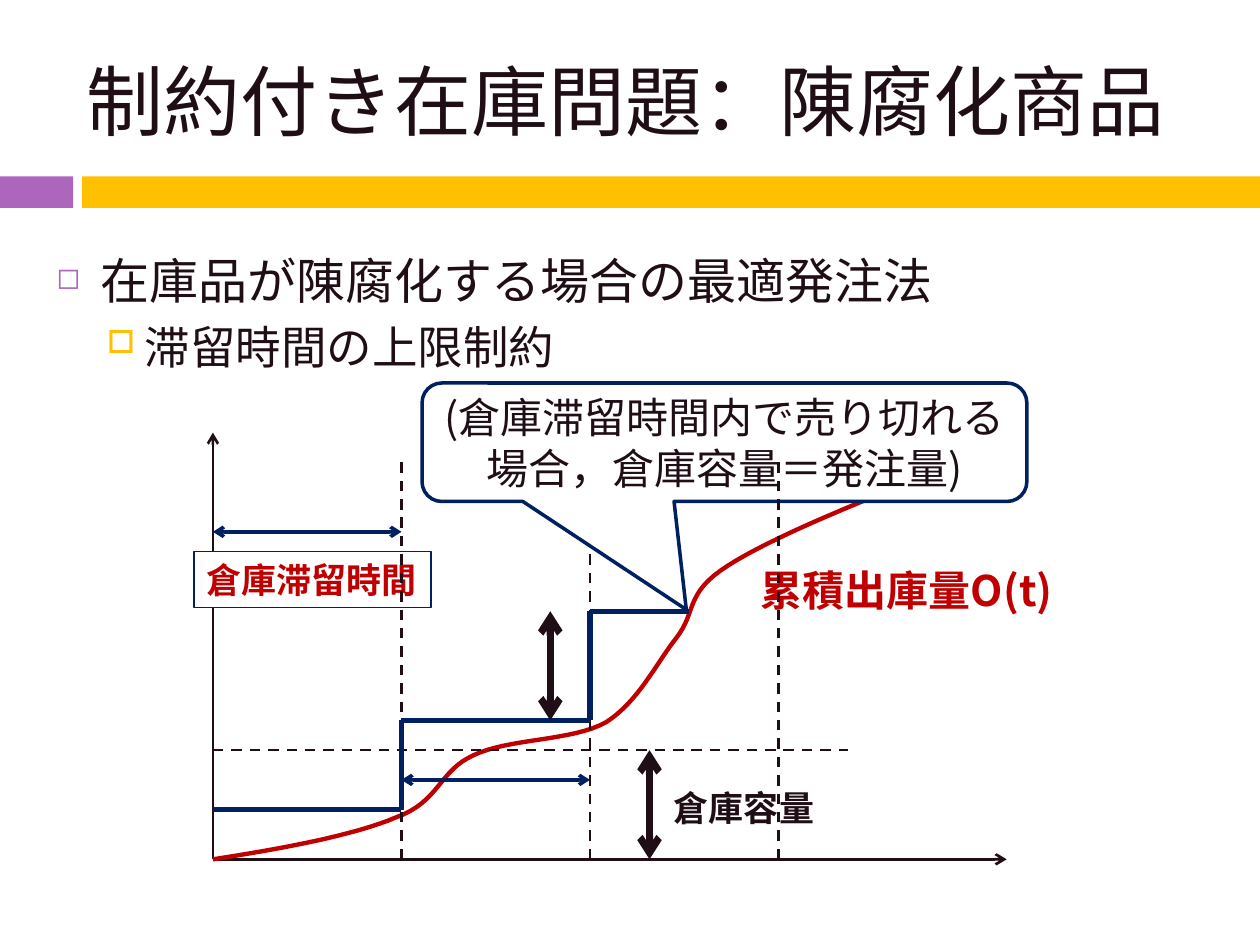
"""Build a slide on the constrained inventory problem for perishable goods."""
from lxml import etree
from pptx import Presentation
from pptx import util as u
from pptx.dml.color import RGBColor
from pptx.enum import dml, shapes, text
from pptx.oxml import ns

COLORS = {"ink": "200E17", "navy": "002060", "red": "C00000", "white": "FFFFFF",
          "purple": "AC66BB", "gold": "FFC000"}
FONT = "Noto Sans CJK JP"
WIDTH, HEIGHT = 10, 7.5
ORIGIN_X, ORIGIN_Y = 1.69, 6.82
CELL = 6.3 / 80
PERIODS = [19 * number for number in range(4)]
FIRST, CAPACITY, SECOND, THIRD = 5, 11, 14, 25
GUIDE_TOP = 40

BANDS = [(0, 0.58, "purple"), (0.65, 9.35, "gold")]
TITLE = "制約付き在庫問題：陳腐化商品"
BULLETS = [
    dict(words="在庫品が陳腐化する場合の最適発注法", size=28, before=7, left=0.35,
         hang=0.35, mark="◻", color="purple", percent=60),
    dict(words="滞留時間の上限制約", size=26, before=5.5, left=0.7,
         hang=0.3, mark="□", color="gold", percent=70),
]
LINE_STYLES = {
    "axis": dict(color="ink", width=1.5, ends=["tailEnd"]),
    "guide": dict(color="ink", width=1.5, dash=True),
    "step": dict(color="navy", width=3),
    "time": dict(color="navy", width=2, ends=["headEnd", "tailEnd"]),
    "amount": dict(color="ink", width=4, ends=["headEnd", "tailEnd"]),
}
OUTFLOW = [
    (0, 0), (7.1, 1.1), (14.1, 2.4), (18.4, 4.2), (22.9, 5.8), (22.7, 8.9),
    (26.3, 10.5), (29.8, 12.2), (36.2, 11.9), (39.6, 13.8), (42.9, 15.9),
    (44.7, 19.8), (46.7, 22.3), (48.8, 25), (47.5, 26.8), (51.9, 29.6),
    (56.3, 32.4), (64.6, 35.8), (73, 39.1),
]
LABELS = {
    "outflow": dict(words="累積出庫量O(t)", box=(5.94, 4.43, 2.68, 0.5), size=24,
                    color="red", bold=True, wrap=True),
    "stay": dict(words="倉庫滞留時間", box=(1.54, 4.38, 1.88, 0.44), size=20,
                 color="red", bold=True, outline=0.75),
    "capacity": dict(words="倉庫容量", box=(5.25, 6.19, 1.32, 0.44), size=20,
                     color="ink", bold=True),
}
CALLOUT = "(倉庫滞留時間内で売り切れる場合，倉庫容量＝発注量)"
CALLOUT_BOX = (3.35, 3.04, 4.8, 0.94)
CALLOUT_ADJUSTMENTS = (-0.063, 1.413, 0.167)
START, ONE, TWO, THREE = PERIODS
BACK_LINES = [("axis", (0, 0), (0, 43)), ("axis", (0, 0), (80, 0))]
LIMIT_LINES = [("guide", (0, CAPACITY), (64, CAPACITY)), ("time", (START, 33), (ONE, 33))]
MIDDLE_LINES = [
    ("step", (START, FIRST), (ONE, FIRST)),
    ("guide", (TWO, 0), (TWO, GUIDE_TOP)),
    ("guide", (ONE, 0), (ONE, GUIDE_TOP)),
    ("time", (ONE, 8), (TWO, 8)),
    ("step", (ONE, SECOND), (TWO, SECOND)),
]
FRONT_LINES = [
    ("step", (ONE, FIRST), (ONE, SECOND)),
    ("step", (TWO, SECOND), (TWO, THIRD)),
    ("step", (TWO, THIRD), (48, THIRD)),
    ("guide", (THREE, 0), (THREE, GUIDE_TOP)),
    ("amount", (44, CAPACITY), (44, 0)),
    ("amount", (34, THIRD), (34, SECOND)),
]


def rgb(name):
    return RGBColor.from_string(COLORS[name])


def inches(values):
    return [u.Inches(value) for value in values]


def place(point):
    return inches((ORIGIN_X + point[0] * CELL, ORIGIN_Y - point[1] * CELL))


def assign(target, values):
    for name, value in values.items():
        setattr(target, name, value)


def child(parent, tag, **attributes):
    return etree.SubElement(parent, ns.qn(f"a:{tag}"), attributes)


def write(paragraph, words, size, color="ink", bold=False):
    run = paragraph.add_run()
    run.text = words
    assign(run.font, dict(size=u.Pt(size), bold=bold, name=FONT))
    run.font.color.rgb = rgb(color)
    child(run.font._element, "ea", typeface=FONT)


def stroke(line, color, width, dash=False, ends=()):
    line.color.rgb = rgb(color)
    line.width = u.Pt(width)
    if dash:
        line.dash_style = dml.MSO_LINE.DASH
    for end in ends:
        child(line._get_or_add_ln(), end, type="arrow")


def draw_shape(slide, kind, box, fill, outline=None):
    shape = slide.shapes.add_shape(kind, *inches(box))
    shape.shadow.inherit = False
    shape.fill.solid()
    shape.fill.fore_color.rgb = rgb(fill)
    if outline:
        stroke(shape.line, "navy", outline)
    else:
        shape.line.fill.background()
    return shape


def draw_lines(slide, lines):
    for style, start, end in lines:
        connector = slide.shapes.add_connector(
            shapes.MSO_CONNECTOR.STRAIGHT, *place(start), *place(end))
        stroke(connector.line, **LINE_STYLES[style])
        child(connector._element.spPr, "effectLst")


def draw_label(slide, words, box, size, color, bold, wrap=False, outline=None):
    if outline:
        shape = draw_shape(slide, shapes.MSO_SHAPE.RECTANGLE, box, "white", outline)
    else:
        shape = slide.shapes.add_textbox(*inches(box))
    frame = shape.text_frame
    assign(frame, dict(word_wrap=wrap, auto_size=text.MSO_AUTO_SIZE.SHAPE_TO_FIT_TEXT,
                       vertical_anchor=text.MSO_ANCHOR.TOP))
    frame.paragraphs[0].alignment = text.PP_ALIGN.LEFT
    write(frame.paragraphs[0], words, size, color, bold)


def draw_outflow(slide, steps=16):
    points = []
    for first in range(0, len(OUTFLOW) - 1, 3):
        controls = OUTFLOW[first:first + 4]
        for step in range(1, steps + 1):
            t = step / steps
            weights = ((1 - t) ** 3, 3 * t * (1 - t) ** 2, 3 * t * t * (1 - t), t ** 3)
            points.append(place([sum(weight * value for weight, value in zip(weights, axis))
                                 for axis in zip(*controls)]))
    builder = slide.shapes.build_freeform(*place(OUTFLOW[0]))
    builder.add_line_segments(points, close=False)
    curve = builder.convert_to_shape()
    curve.shadow.inherit = False
    curve.fill.background()
    stroke(curve.line, "red", 2.5)


def draw_heading(slide):
    for left, width, color in BANDS:
        draw_shape(slide, shapes.MSO_SHAPE.RECTANGLE, (left, 1.4, width, 0.25), color)
    title = slide.shapes.add_textbox(*inches((0.59, 0.25, 8.92, 1.08))).text_frame
    assign(title, dict(word_wrap=True, vertical_anchor=text.MSO_ANCHOR.MIDDLE))
    write(title.paragraphs[0], TITLE, 44)
    body = slide.shapes.add_textbox(*inches((0.35, 1.94, 9.37, 5.35))).text_frame
    body.word_wrap = True
    for number, item in enumerate(BULLETS):
        paragraph = body.add_paragraph() if number else body.paragraphs[0]
        paragraph.space_before = u.Pt(item["before"])
        paragraph.level = number
        properties = paragraph._p.get_or_add_pPr()
        properties.set("marL", str(u.Inches(item["left"])))
        properties.set("indent", str(-u.Inches(item["hang"])))
        child(child(properties, "buClr"), "srgbClr", val=COLORS[item["color"]])
        child(properties, "buSzPct", val=str(item["percent"] * 1000))
        child(properties, "buChar", char=item["mark"])
        write(paragraph, item["words"], item["size"])


def draw_callout(slide):
    callout = draw_shape(slide, shapes.MSO_SHAPE.ROUNDED_RECTANGULAR_CALLOUT,
                         CALLOUT_BOX, "white", 2)
    for number, value in enumerate(CALLOUT_ADJUSTMENTS):
        callout.adjustments[number] = value
    assign(callout.text_frame, dict(word_wrap=True, vertical_anchor=text.MSO_ANCHOR.MIDDLE))
    callout.text_frame.paragraphs[0].alignment = text.PP_ALIGN.CENTER
    write(callout.text_frame.paragraphs[0], CALLOUT, 24)


def main():
    presentation = Presentation()
    assign(presentation, dict(slide_width=u.Inches(WIDTH), slide_height=u.Inches(HEIGHT)))
    slide = presentation.slides.add_slide(presentation.slide_layouts[6])
    draw_heading(slide)
    draw_lines(slide, BACK_LINES)
    draw_outflow(slide)
    draw_label(slide, **LABELS["outflow"])
    draw_lines(slide, LIMIT_LINES)
    draw_label(slide, **LABELS["stay"])
    draw_lines(slide, MIDDLE_LINES)
    draw_callout(slide)
    draw_lines(slide, FRONT_LINES)
    draw_label(slide, **LABELS["capacity"])
    presentation.save("out.pptx")


if __name__ == "__main__":
    main()
